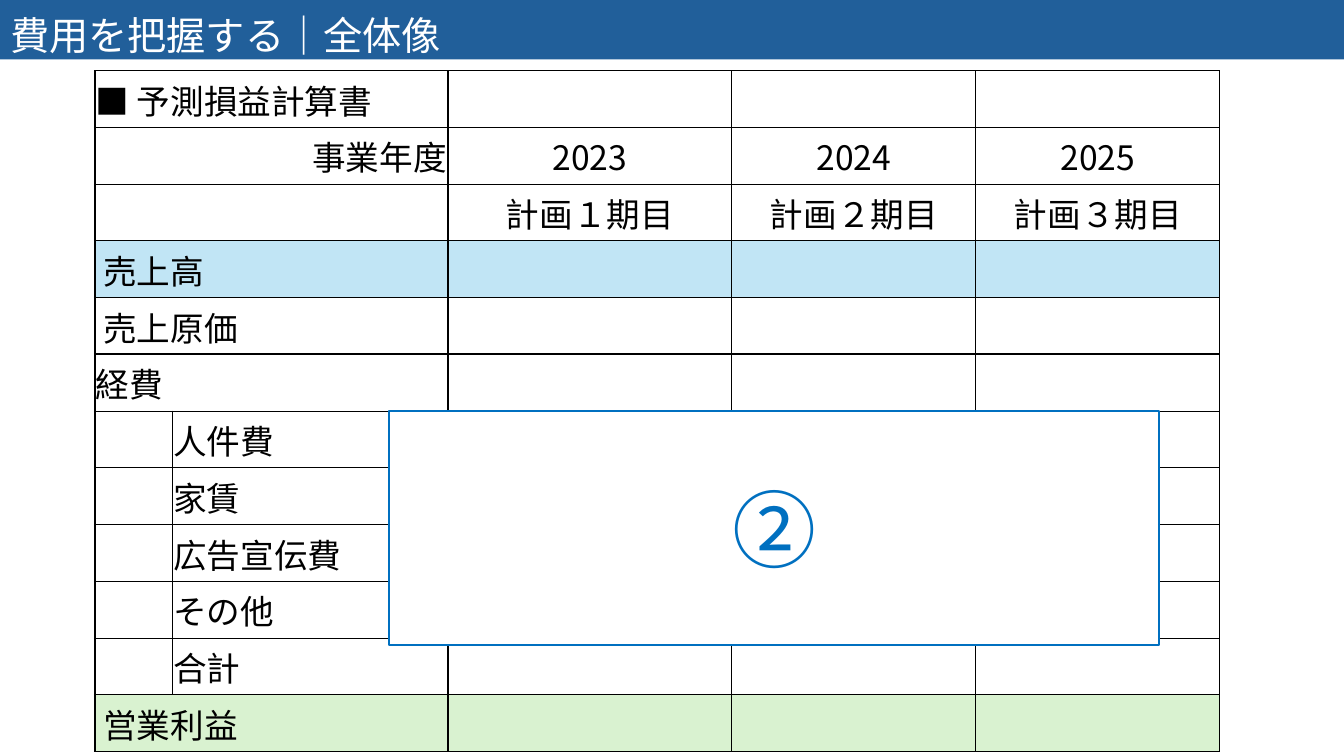
from lxml import etree
from pptx import Presentation
from pptx.dml.color import RGBColor
from pptx.enum.shapes import MSO_SHAPE
from pptx.enum.text import MSO_ANCHOR, MSO_AUTO_SIZE, PP_ALIGN
from pptx.oxml.ns import qn
from pptx.util import Inches, Pt

LEFT, MID, RIGHT = PP_ALIGN.LEFT, PP_ALIGN.CENTER, PP_ALIGN.RIGHT
MIDDLE = MSO_ANCHOR.MIDDLE
NO_FIT = MSO_AUTO_SIZE.NONE
RECT = MSO_SHAPE.RECTANGLE

WHITE = RGBColor(0xFF, 0xFF, 0xFF)
BLACK = RGBColor(0x00, 0x00, 0x00)
NAVY = RGBColor(0x21, 0x5F, 0x9A)
BLUE = RGBColor(0x00, 0x70, 0xC0)
SKY = RGBColor(0xC1, 0xE5, 0xF5)
GREEN = RGBColor(0xD9, 0xF2, 0xD0)

FACE = "Noto Sans CJK JP"
THIN, THICK = Pt(0.75), Pt(1.5)
COLS = [0.77, 2.73, 2.82, 2.42, 2.42]
HEADS = [
    ("■ 予測損益計算書", LEFT, []),
    ("事業年度", RIGHT, ["2023", "2024", "2025"]),
    ("", LEFT, ["計画１期目", "計画２期目", "計画３期目"]),
    (" 売上高", LEFT, []),
    (" 売上原価", LEFT, []),
    ("経費", LEFT, []),
]
COSTS = ["人件費", "家賃", "広告宣伝費", "その他", "合計"]
TOTAL = (" 営業利益", LEFT, [])
FILLS = {3: SKY, 11: GREEN}


class Deck:
    """Holds the style and the current slide, and draws each kind of element."""

    def __init__(self):
        self.file = Presentation()
        self.file.slide_width = Inches(13.33)
        self.file.slide_height = Inches(7.5)
        self.slide = self.file.slides.add_slide(self.file.slide_layouts[5])

    def label(self, frame, text, size, color, align):
        para = frame.paragraphs[0]
        para.alignment = align
        run = para.add_run()
        run.text = text
        run.font.color.rgb = color
        for name, value in {"size": Pt(size), "name": FACE, "bold": False}.items():
            setattr(run.font, name, value)
        east = etree.SubElement(run.font._element, qn("a:ea"))
        east.set("typeface", FACE)

    def title(self, text):
        bar = self.slide.shapes.title
        place = {"left": 0, "top": 0, "width": 13.33, "height": 0.59}
        for name, value in place.items():
            setattr(bar, name, Inches(value))
        bar.fill.solid()
        bar.fill.fore_color.rgb = NAVY
        style = {"auto_size": NO_FIT, "vertical_anchor": MIDDLE,
                 "margin_top": Inches(0.16), "margin_bottom": Inches(0.05)}
        for name, value in style.items():
            setattr(bar.text_frame, name, value)
        self.label(bar.text_frame, text, 28, WHITE, LEFT)

    def box(self, text, left, top, width, height):
        box = self.slide.shapes.add_shape(
            RECT, Inches(left), Inches(top), Inches(width), Inches(height))
        box.shadow.inherit = False
        box.fill.solid()
        box.fill.fore_color.rgb = WHITE
        box.line.color.rgb = BLUE
        box.line.width = THICK
        box.text_frame.vertical_anchor = MIDDLE
        self.label(box.text_frame, text, 60, BLUE, MID)

    def edges(self, cell, sides):
        props = cell._tc.get_or_add_tcPr()
        for side, width in sides.items():
            line = etree.SubElement(props, qn("a:ln" + side), w=str(width))
            fill = etree.SubElement(line, qn("a:solidFill"))
            etree.SubElement(fill, qn("a:srgbClr"), val=str(BLACK))

    def table(self, rows, left, top, height):
        grid = self.slide.shapes.add_table(
            len(rows), len(COLS), Inches(left), Inches(top),
            Inches(sum(COLS)), Inches(height)).table
        grid.first_row = grid.horz_banding = False
        for col, width in zip(grid.columns, COLS):
            col.width = Inches(width)
        for r, (texts, aligns, merged) in enumerate(rows):
            if merged:
                grid.cell(r, 0).merge(grid.cell(r, 1))
            for c, (text, align) in enumerate(zip(texts, aligns)):
                cell = grid.cell(r, c)
                self.edges(cell, {
                    "L": THICK if c in (0, 2) else THIN,
                    "R": THICK if c == 1 or c == 0 and merged else THIN,
                    "T": THICK if r == 5 else THIN,
                    "B": THICK if r in (4, 11) else THIN})
                cell.fill.solid()
                cell.fill.fore_color.rgb = FILLS.get(r, WHITE)
                style = {"margin_left": Inches(0.01), "margin_right": Inches(0.01),
                         "margin_top": Inches(0.01), "margin_bottom": 0,
                         "vertical_anchor": MIDDLE}
                for name, value in style.items():
                    setattr(cell, name, value)
                if text:
                    self.label(cell.text_frame, text, 24, BLACK, align)


def span(label, align, years):
    """Lays out a row whose label covers the first two columns."""
    return [label, ""] + (years or [""] * 3), [align] * 2 + [MID] * 3, True


def main():
    """Builds the slide and saves it."""
    deck = Deck()
    deck.title("費用を把握する｜全体像")
    rows = [span(*head) for head in HEADS]
    rows += [(["", cost, "", "", ""], [LEFT] * 5, False) for cost in COSTS]
    rows.append(span(*TOTAL))
    deck.table(rows, 0.94, 0.7, 6.76)
    deck.box("②", 3.86, 4.08, 7.64, 2.32)
    deck.file.save("out.pptx")


if __name__ == "__main__":
    main()
